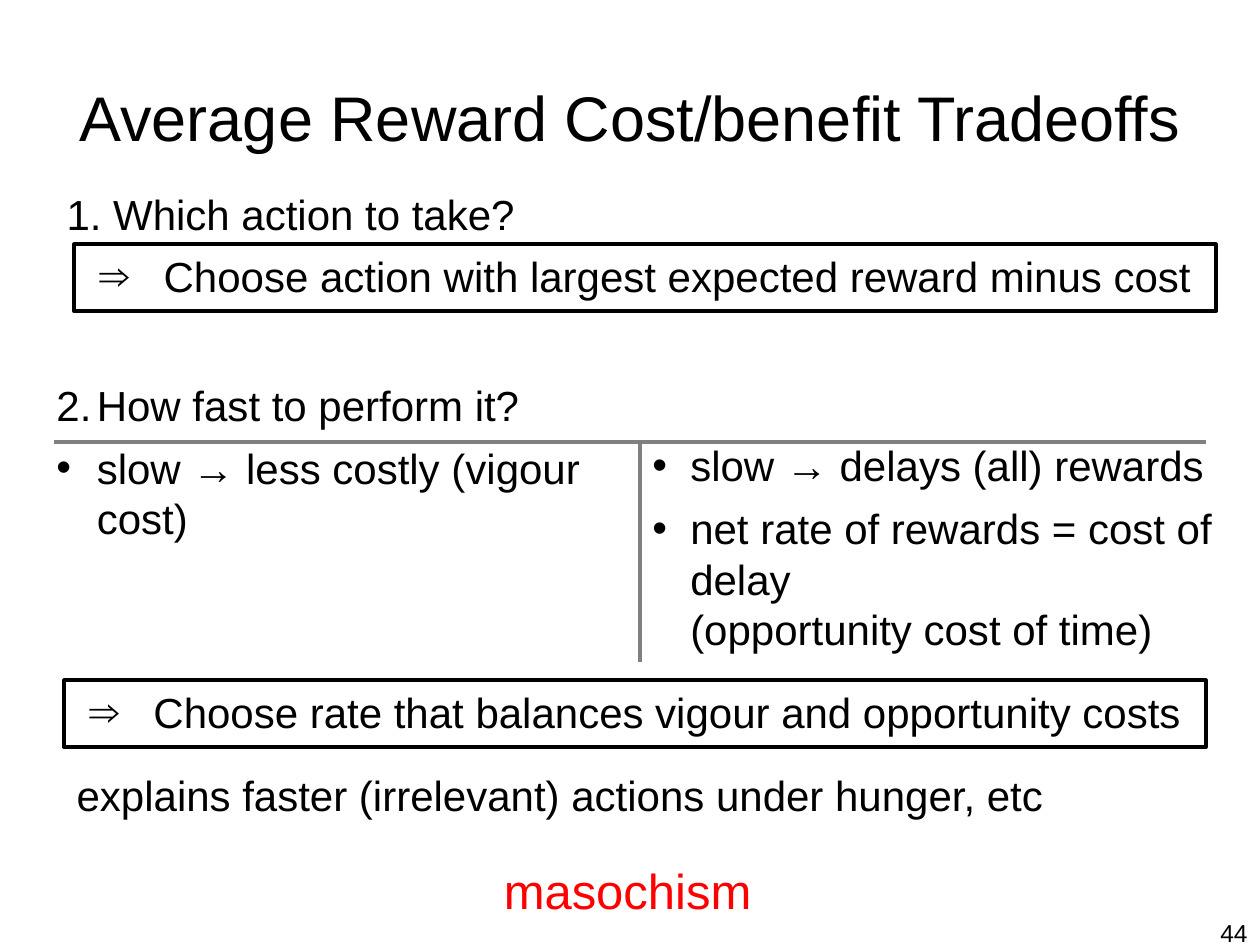
from lxml import etree
from pptx import Presentation
from pptx.dml.color import RGBColor
from pptx.enum.shapes import MSO_CONNECTOR, MSO_SHAPE
from pptx.enum.text import MSO_ANCHOR, PP_ALIGN
from pptx.oxml.ns import qn
from pptx.util import Inches, Pt

LEFT, CENTER, RIGHT = PP_ALIGN.LEFT, PP_ALIGN.CENTER, PP_ALIGN.RIGHT
TOP, MIDDLE = MSO_ANCHOR.TOP, MSO_ANCHOR.MIDDLE
RECTANGLE, STRAIGHT = MSO_SHAPE.RECTANGLE, MSO_CONNECTOR.STRAIGHT
BLACK, GRAY, RED = "000000", "808080", "FF0000"

deck = Presentation()
deck.slide_width, deck.slide_height = Inches(10), Inches(7.5)
COL, ROW = deck.slide_width / 100, deck.slide_height / 100
slide = deck.slides.add_slide(deck.slide_layouts[6])


def color(hex_string):
    return RGBColor.from_string(hex_string)


def write(box, lines, size=24, ink=BLACK, align=LEFT, anchor=TOP, hang=0, bullets=(), wrap=True):
    frame = box.text_frame
    frame.word_wrap = wrap
    frame.vertical_anchor = anchor
    frame.text = "\n".join(lines)
    for index, paragraph in enumerate(frame.paragraphs):
        paragraph.alignment = align
        if index:
            paragraph.space_before = Pt(7.2)
        for run in paragraph.runs:
            run.font.name, run.font.size = "Arial", Pt(size)
            run.font.color.rgb = color(ink)
        properties = paragraph._p.get_or_add_pPr()
        if hang:
            properties.set("marL", str(Inches(hang)))
            properties.set("indent", str(-Inches(hang)))
        if bullets:
            mark = bullets[index]
            etree.SubElement(properties, qn("a:buFont"), typeface="Arial")
            if mark == "2.":
                etree.SubElement(properties, qn("a:buAutoNum"), type="arabicPeriod", startAt="2")
            else:
                etree.SubElement(properties, qn("a:buChar"), char=mark)


texts = [
    ((0, 4, 100, 16.67), ["Average Reward Cost/benefit Tradeoffs"],
     dict(size=36, align=CENTER, anchor=MIDDLE)),
    ((4.3, 19.33, 48, 6.67), ["1. Which action to take?"], dict(hang=0.32)),
    ((3.5, 39.47, 48, 18.93), ["How fast to perform it?", "slow → less costly (vigour cost)"],
     dict(hang=0.32, bullets=("2.", "•"))),
    ((50.8, 45.87, 46.9, 24.27),
     ["slow → delays (all) rewards",
      "net rate of rewards = cost of delay\v(opportunity cost of time)"],
     dict(hang=0.3, bullets=("•", "•"))),
    ((5.1, 80.8, 91.2, 6.67), ["explains faster (irrelevant) actions under hunger, etc"],
     dict(wrap=False)),
    ((39, 90.4, 23.9, 7.6), ["masochism"], dict(size=28, ink=RED, wrap=False)),
    ((76.7, 96.53, 23.3, 6.93), ["44"], dict(size=14, align=RIGHT)),
]
for (x, y, width, height), lines, style in texts:
    box = slide.shapes.add_textbox(
        int(x * COL), int(y * ROW), int(width * COL), int(height * ROW))
    write(box, lines, **style)

conclusions = [
    (5.9, 25.87, "Choose action with largest expected reward minus cost"),
    (5.1, 72, "Choose rate that balances vigour and opportunity costs"),
]
for x, y, conclusion in conclusions:
    frame_box = slide.shapes.add_shape(
        RECTANGLE, int(x * COL), int(y * ROW), int(90.6 * COL), int(7.07 * ROW))
    frame_box.shadow.inherit = False
    frame_box.fill.background()
    frame_box.line.color.rgb = color(BLACK)
    frame_box.line.width = Pt(2.25)
    write(frame_box, [conclusion], align=CENTER, hang=0.51, bullets=("⇒",))

for x1, y1, x2, y2 in [(4.3, 46.8, 95.7, 46.8), (50.8, 46.8, 50.8, 70)]:
    divider = slide.shapes.add_connector(
        STRAIGHT, int(x1 * COL), int(y1 * ROW), int(x2 * COL), int(y2 * ROW))
    divider.line.color.rgb = color(GRAY)
    divider.line.width = Pt(2.25)
    etree.SubElement(divider._element.spPr, qn("a:effectLst"))

deck.save("out.pptx")
